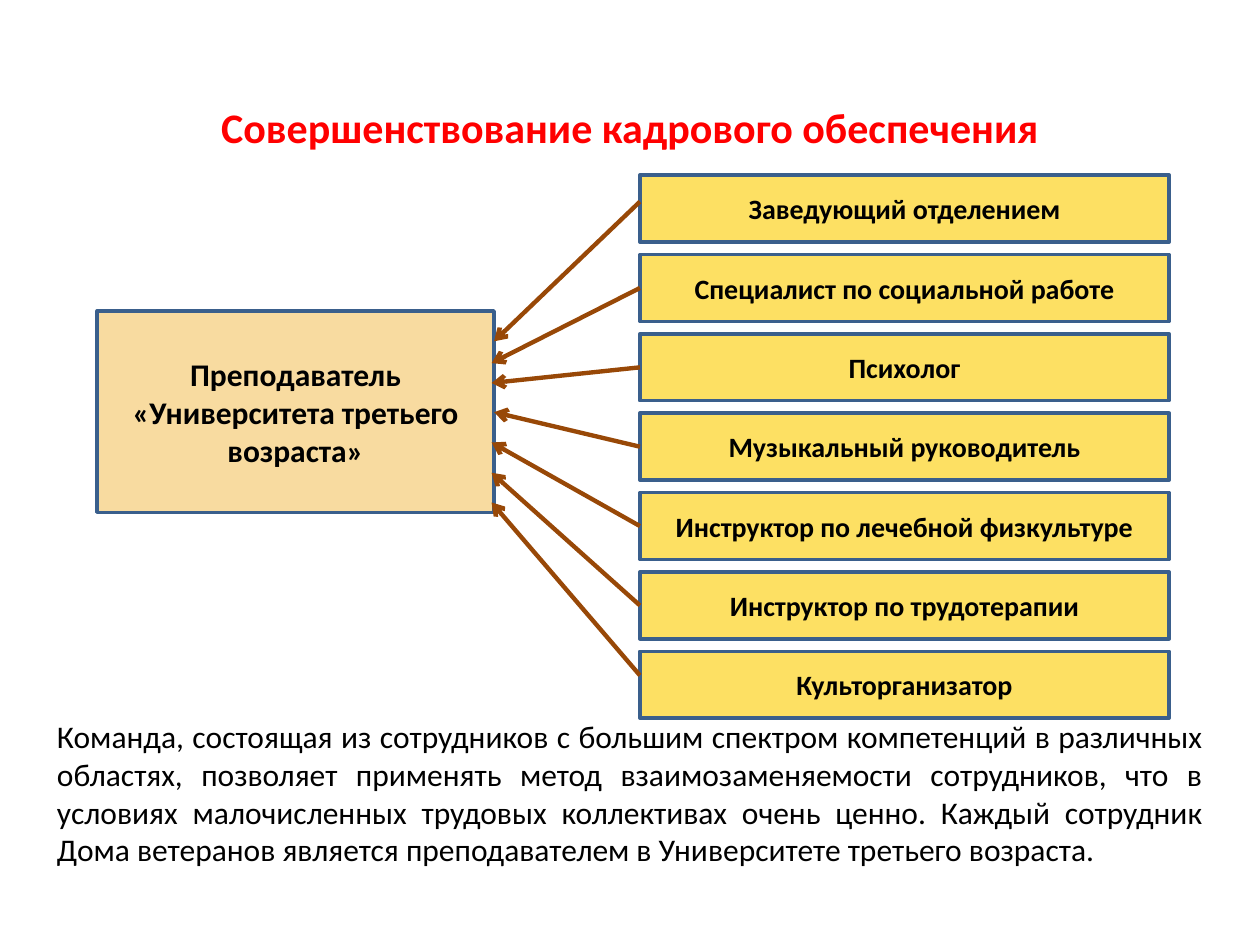
from lxml import etree
from pptx import Presentation
from pptx.dml.color import RGBColor
from pptx.enum.shapes import MSO_CONNECTOR, MSO_SHAPE
from pptx.enum.text import MSO_ANCHOR, MSO_AUTO_SIZE, PP_ALIGN
from pptx.oxml.ns import qn
from pptx.util import Cm, Pt

RECT = MSO_SHAPE.RECTANGLE
LINE = MSO_CONNECTOR.STRAIGHT
MIDDLE = MSO_ANCHOR.MIDDLE
GROW = MSO_AUTO_SIZE.SHAPE_TO_FIT_TEXT
CENTER, JUSTIFY = PP_ALIGN.CENTER, PP_ALIGN.JUSTIFY

BLACK = RGBColor(0x00, 0x00, 0x00)
RED = RGBColor(0xFF, 0x00, 0x00)
SAND = RGBColor(0xF8, 0xDB, 0xA0)
YELLOW = RGBColor(0xFD, 0xE0, 0x63)
BLUE = RGBColor(0x3A, 0x5F, 0x8C)
BROWN = RGBColor(0x98, 0x48, 0x07)

TITLE = "Совершенствование кадрового обеспечения"
TUTOR = "Преподаватель «Университета третьего возраста»"
NOTE = (
    "Команда, состоящая из сотрудников с большим спектром компетенций "
    "в различных областях, позволяет применять метод взаимозаменяемости "
    "сотрудников, что в условиях малочисленных трудовых коллективах очень "
    "ценно. Каждый сотрудник Дома ветеранов является преподавателем "
    "в Университете третьего возраста."
)
# Role, start shift from the card's middle, arrow tip from the tutor's top right
STAFF = [
    ("Заведующий отделением", -0.14, (0, 0.61)),
    ("Специалист по социальной работе", 0, (-0.05, 1.05)),
    ("Психолог", 0, (-0.05, 1.45)),
    ("Музыкальный руководитель", 0, (0, 2.04)),
    ("Инструктор по лечебной физкультуре", 0, (-0.05, 2.65)),
    ("Инструктор по трудотерапии", 0, (-0.05, 3.26)),
    ("Культорганизатор", -0.19, (-0.05, 3.86)),
]
CARD_H, STEP = 1.35, 1.6


def write(frame, text, size, color=BLACK, bold=True, align=CENTER):
    frame.word_wrap = True
    para = frame.paragraphs[0]
    para.alignment = align
    run = para.add_run()
    run.text = text
    font = run.font
    font.name, font.size, font.bold = "Calibri", Pt(size), bold
    font.color.rgb = color


def add_text(slide, box, text, size, **style):
    frame = slide.shapes.add_textbox(*map(Cm, box)).text_frame
    write(frame, text, size, **style)
    frame.auto_size = GROW


def add_card(slide, box, text, size, fill):
    card = slide.shapes.add_shape(RECT, *map(Cm, box))
    card.shadow.inherit = False
    card.fill.solid()
    card.fill.fore_color.rgb = fill
    card.line.color.rgb = BLUE
    card.line.width = Pt(2)
    card.text_frame.vertical_anchor = MIDDLE
    write(card.text_frame, text, size)
    return card


def add_arrow(slide, start, tip):
    arrow = slide.shapes.add_connector(LINE, *map(Cm, start + tip))
    arrow.line.color.rgb = BROWN
    arrow.line.width = Pt(2.5)
    etree.SubElement(arrow.line._get_or_add_ln(), qn("a:tailEnd"), type="arrow")
    etree.SubElement(arrow._element.spPr, qn("a:effectLst"))
    return arrow


def add_team(slide, box):
    """Tutor at the left, staff cards at the right, arrows between them."""
    left, top, width, _ = box
    tutor_y, tutor_w, card_w = top + 2.74, 8, 10.67
    add_card(slide, (left, tutor_y, tutor_w, 4.06), TUTOR, 18, SAND)
    card_x = left + width - card_w
    for row, (role, shift, (dx, dy)) in enumerate(STAFF):
        y = top + row * STEP
        card = add_card(slide, (card_x, y, card_w, CARD_H), role, 16, YELLOW)
        start = (card_x, y + CARD_H / 2 + shift)
        arrow = add_arrow(slide, start, (left + tutor_w + dx, tutor_y + dy))
        if not shift:
            arrow.begin_connect(card, 1)


def main():
    deck = Presentation()
    deck.slide_width, deck.slide_height = Cm(25.4), Cm(19.05)
    slide = deck.slides.add_slide(deck.slide_layouts[6])
    # Title
    add_text(slide, (0, 1.93, 25.4, 1.28), TITLE, 24, color=RED)
    # Closing note
    add_text(slide, (0.9, 14.33, 23.6, 3.33), NOTE, 18, bold=False, align=JUSTIFY)
    # Team diagram
    add_team(slide, (1.96, 3.53, 21.61, 10.95))
    deck.save("out.pptx")


if __name__ == "__main__":
    main()
